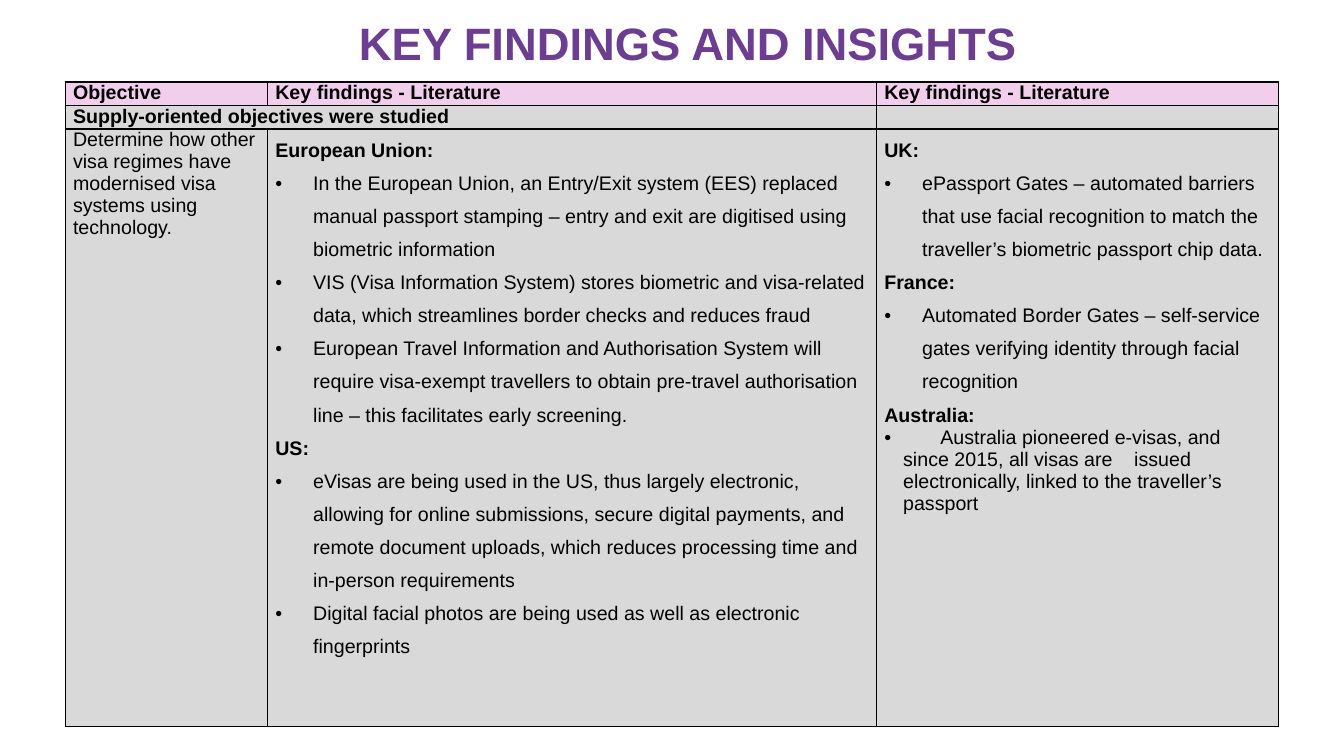
from dataclasses import dataclass

from lxml.etree import SubElement
from pptx import Presentation
from pptx.dml.color import RGBColor as RGB
from pptx.enum.text import MSO_ANCHOR as ANCHOR, PP_ALIGN as ALIGN
from pptx.oxml.ns import qn
from pptx.util import Pt


@dataclass(frozen=True)
class Theme:
    font: str = "Arial"
    title: RGB = RGB(0x6C, 0x3D, 0x91)
    text: RGB = RGB(0, 0, 0)
    header: RGB = RGB(0xF2, 0xCE, 0xED)
    body: RGB = RGB(0xD9, 0xD9, 0xD9)
    border: str = "000000"
    title_size: float = 32.4
    text_size: float = 14


@dataclass(frozen=True)
class Para:
    text: str
    bold: bool = False
    spacing: float = 1.0
    indent: float = 0
    tabs: tuple = ()


def heading(text):
    return Para(text, bold=True, spacing=1.5)


def bullet(text):
    return Para(text, spacing=1.5, indent=27)


HEADER = [[Para(text, bold=True)] for text in
          ("Objective", "Key findings - Literature", "Key findings - Literature")]
SECTION = [[Para("Supply-oriented objectives were studied", bold=True)], [], []]
OBJECTIVE = [Para("Determine how other visa regimes have modernised visa systems using technology.")]
EU_AND_US = [
    heading("European Union:"),
    bullet("In the European Union, an Entry/Exit system (EES) replaced manual passport stamping "
           "– entry and exit are digitised using biometric information"),
    bullet("VIS (Visa Information System) stores biometric and visa-related data, "
           "which streamlines border checks and reduces fraud"),
    bullet("European Travel Information and Authorisation System will require visa-exempt "
           "travellers to obtain pre-travel authorisation line – this facilitates early screening."),
    heading("US:"),
    bullet("eVisas are being used in the US, thus largely electronic, allowing for online "
           "submissions, secure digital payments, and remote document uploads, which reduces "
           "processing time and in-person requirements"),
    bullet("Digital facial photos are being used as well as electronic fingerprints"),
]
OTHER_COUNTRIES = [
    heading("UK:"),
    bullet("ePassport Gates – automated barriers that use facial recognition to match "
           "the traveller’s biometric passport chip data."),
    heading("France:"),
    bullet("Automated Border Gates – self-service gates verifying identity "
           "through facial recognition"),
    heading("Australia:"),
    Para("\tAustralia pioneered e-visas, and since 2015, all visas are\tissued electronically, "
         "linked to the traveller’s passport", indent=13.5, tabs=(40, 178.5)),
]
ROWS = [HEADER, SECTION, [OBJECTIVE, EU_AND_US, OTHER_COUNTRIES]]


class SlideBuilder:
    def __init__(self, slide, theme):
        self.slide = slide
        self.theme = theme

    def style(self, p, size, color, bold):
        for r in p.runs:
            font = r.font
            font.name, font.size, font.bold = self.theme.font, Pt(size), bold
            font.color.rgb = color

    def title(self, text, left, top, width, height):
        tf = self.slide.shapes.add_textbox(Pt(left), Pt(top), Pt(width), Pt(height)).text_frame
        tf.word_wrap = True
        tf.vertical_anchor = ANCHOR.MIDDLE
        tf.margin_top = tf.margin_bottom = 0
        p = tf.paragraphs[0]
        p.text = text
        p.alignment = ALIGN.CENTER
        p.line_spacing = 0.9
        self.style(p, self.theme.title_size, self.theme.title, True)

    def table(self, rows, left, top, widths, heights):
        table = self.slide.shapes.add_table(
            len(rows), len(widths), Pt(left), Pt(top), Pt(sum(widths)), Pt(sum(heights))).table
        table.horz_banding = False
        for column, width in zip(table.columns, widths):
            column.width = Pt(width)
        for i, (row, height) in enumerate(zip(rows, heights)):
            table.rows[i].height = Pt(height)
            for j, paras in enumerate(row):
                self.cell(table.cell(i, j), paras, self.theme.body if i else self.theme.header)
        return table

    def cell(self, cell, paras, fill):
        cell.margin_left = cell.margin_right = Pt(5.4)
        cell.margin_top = cell.margin_bottom = 0
        self.borders(cell)
        cell.fill.solid()
        cell.fill.fore_color.rgb = fill
        tf = cell.text_frame
        for i, para in enumerate(paras):
            self.paragraph(tf.paragraphs[0] if i == 0 else tf.add_paragraph(), para)
        if not paras:
            SubElement(tf.paragraphs[0]._p, qn("a:endParaRPr"),
                       sz=str(int(self.theme.text_size * 100)))

    def borders(self, cell):
        tcPr = cell._tc.get_or_add_tcPr()
        for side in ("lnL", "lnR", "lnT", "lnB"):
            ln = SubElement(tcPr, qn(f"a:{side}"), w=str(Pt(1)))
            SubElement(SubElement(ln, qn("a:solidFill")), qn("a:srgbClr"), val=self.theme.border)

    def paragraph(self, p, para):
        p.text = para.text
        if para.indent:
            pPr = p._p.get_or_add_pPr()
            pPr.set("marL", str(Pt(para.indent)))
            pPr.set("indent", str(-Pt(para.indent)))
            SubElement(pPr, qn("a:buFont"), typeface=self.theme.font)
            SubElement(pPr, qn("a:buChar"), char="•")
            if para.tabs:
                tabs = SubElement(pPr, qn("a:tabLst"))
                for pos in para.tabs:
                    SubElement(tabs, qn("a:tab"), pos=str(Pt(pos)), algn="l")
        p.line_spacing = para.spacing
        self.style(p, self.theme.text_size, self.theme.text, para.bold)


def main():
    prs = Presentation()
    prs.slide_width, prs.slide_height = Pt(960), Pt(540)
    s = SlideBuilder(prs.slides.add_slide(prs.slide_layouts[6]), Theme())
    s.title("KEY FINDINGS AND INSIGHTS", 121.5, 13.5, 739.5, 38)
    table = s.table(ROWS, 46.8, 58.5, widths=(144.5, 435, 287), heights=(15.8, 15.8, 427))
    table.cell(1, 0).merge(table.cell(1, 1))
    prs.save("out.pptx")


if __name__ == "__main__":
    main()
